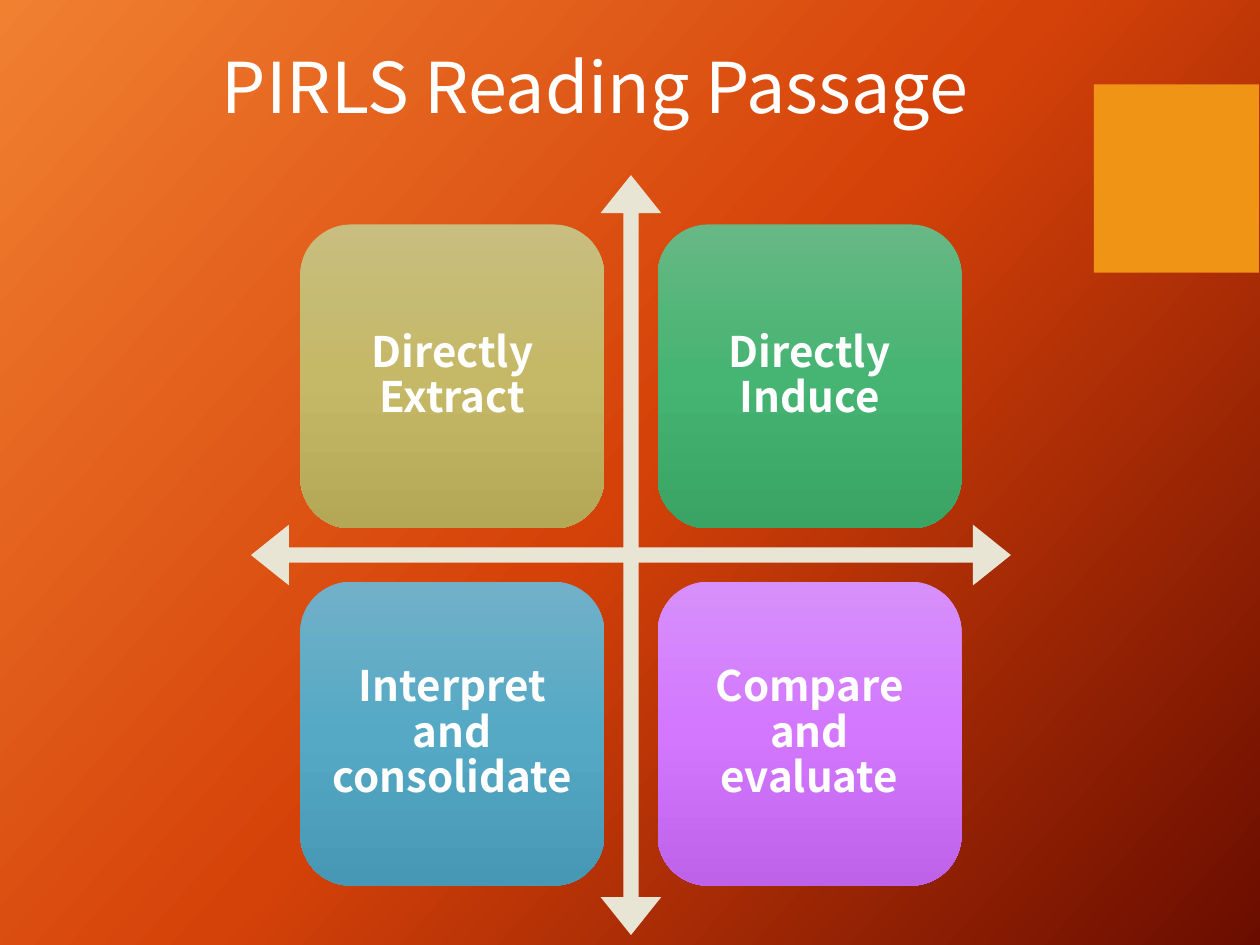
from copy import deepcopy
from dataclasses import dataclass

from pptx import Presentation
from pptx.dml.color import RGBColor
from pptx.enum import shapes, text
from pptx.util import Cm, Pt


@dataclass(frozen=True)
class Theme:
    font: str = "Noto Sans CJK TC"
    head: int = 40
    label: int = 24
    ink: str = "FFFFFF"
    tab: str = "F09415"
    cross: str = "E9E5D4"
    back: tuple = ("F18031", "D54209", "6A0D00")
    sand: tuple = ("C8BE7F", "C5B867", "B4A756")
    green: tuple = ("67B884", "46B472", "3AA464")
    blue: tuple = ("71B0C8", "55A9C5", "4798B4")
    plum: tuple = ("D790FB", "D377FF", "BE62EA")


THEME = Theme()
KIND = shapes.MSO_SHAPE


def blend(fill, tones, angle):
    """Fill with evenly spaced tones, the angle counted clockwise."""
    fill.gradient()
    fill.gradient_angle = -angle % 360
    last = fill.gradient_stops[-1]._gs
    for _ in tones[2:]:
        last.addnext(deepcopy(last))
    for i, (stop, tone) in enumerate(zip(fill.gradient_stops, tones)):
        stop.color.rgb = RGBColor.from_string(tone)
        stop.position = i / (len(tones) - 1)


def add_form(slide, kind, box, tone=None):
    form = slide.shapes.add_shape(kind, *map(Cm, box))
    form.shadow.inherit = False
    form.line.fill.background()
    if tone:
        form.fill.solid()
        form.fill.fore_color.rgb = RGBColor.from_string(tone)
    return form


def add_words(para, words, size, bold=False):
    run = para.add_run()
    run.text = words
    font = run.font
    font.name, font.size, font.bold = THEME.font, Pt(size), bold
    font.color.rgb = RGBColor.from_string(THEME.ink)


def add_title(slide, box, words):
    title = slide.shapes.title
    title.left, title.top, title.width, title.height = map(Cm, box)
    frame = title.text_frame
    frame.word_wrap = False
    frame.auto_size = text.MSO_AUTO_SIZE.SHAPE_TO_FIT_TEXT
    frame.vertical_anchor = text.MSO_ANCHOR.TOP
    para = frame.paragraphs[0]
    para.alignment = text.PP_ALIGN.LEFT
    add_words(para, words, THEME.head)


def add_tile(slide, box, words, tones):
    tile = add_form(slide, KIND.ROUNDED_RECTANGLE, box)
    blend(tile.fill, tones, 90)
    frame = tile.text_frame
    frame.word_wrap = True
    frame.vertical_anchor = text.MSO_ANCHOR.MIDDLE
    frame.margin_left = frame.margin_right = Cm(0.25)
    frame.margin_top = frame.margin_bottom = Cm(0.25)
    para = frame.paragraphs[0]
    para.alignment = text.PP_ALIGN.CENTER
    para.line_spacing = 0.9
    para.space_after = Pt(0.35 * THEME.label)
    add_words(para, words, THEME.label, bold=True)


def add_matrix(slide, box, tiles):
    """Crossed arrows with one tile in each quarter, row by row."""
    left, top, side, _ = box
    cross = add_form(slide, KIND.QUAD_ARROW, box, THEME.cross)
    for i, ratio in enumerate((0.02, 0.04, 0.05)):
        cross.adjustments[i] = ratio
    size, edge = 0.4 * side, 0.065 * side
    step = side - 2 * edge - size
    for i, (words, tones) in enumerate(tiles):
        row, col = divmod(i, 2)
        spot = (left + edge + col * step, top + edge + row * step, size, size)
        add_tile(slide, spot, words, tones)


def main():
    deck = Presentation()
    deck.slide_width, deck.slide_height = Cm(25.4), Cm(19.05)
    slide = deck.slides.add_slide(deck.slide_layouts[5])
    blend(slide.background.fill, THEME.back, 42)
    add_form(slide, KIND.RECTANGLE, (22.05, 1.7, 3.33, 3.8), THEME.tab)
    add_matrix(slide, (5.06, 3.53, 15.32, 15.32), (
        ("Directly Extract", THEME.sand),
        ("Directly Induce", THEME.green),
        ("Interpret and consolidate", THEME.blue),
        ("Compare and evaluate", THEME.plum),
    ))
    add_title(slide, (4.22, 0.74, 15.8, 1.96), "PIRLS Reading Passage")
    deck.save("out.pptx")


if __name__ == "__main__":
    main()
